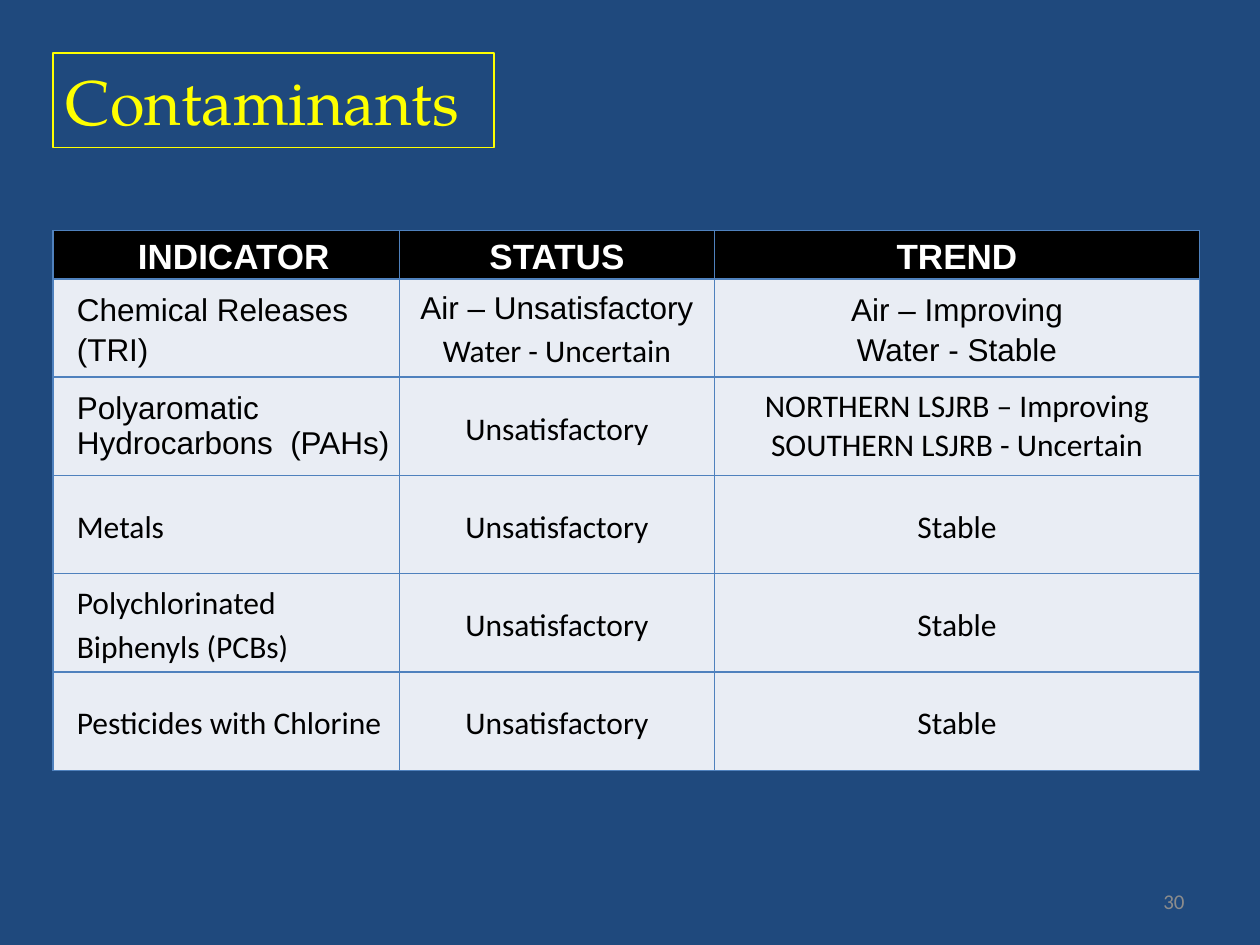
"""Build the Contaminants slide: indicator status and trend table."""
from lxml import etree
from pptx import Presentation
from pptx import util as u
from pptx.dml.color import RGBColor
from pptx.enum import text
from pptx.oxml.ns import qn

NAVY = RGBColor(0x1F, 0x49, 0x7D)
YELLOW = RGBColor(0xFF, 0xFF, 0x00)
BLACK = RGBColor(0, 0, 0)
WHITE = RGBColor(0xFF, 0xFF, 0xFF)
PALE = RGBColor(0xE9, 0xED, 0xF4)
BORDER = RGBColor(0x4F, 0x81, 0xBD)
GREY = RGBColor(0x8C, 0x8C, 0x8C)
SANS, BODY, DISPLAY = "Arial", "Calibri", "TeX Gyre Pagella"
LOOSE, SINGLE = 1.15, 1.0

TITLE = "Contaminants"
PAGE = "30"
HEADINGS = ["INDICATOR", "STATUS", "TREND"]
UNSATISFACTORY = ([("Unsatisfactory", BODY)], LOOSE)
STABLE = ([("Stable", BODY)], LOOSE)
INDICATORS = [
    [([("Chemical Releases (TRI)", SANS)], LOOSE),
     ([("Air – Unsatisfactory", SANS), ("Water - Uncertain", BODY)], LOOSE),
     ([("Air – Improving", SANS), ("Water - Stable", SANS)], LOOSE)],
    [([("Polyaromatic Hydrocarbons  (PAHs)", SANS)], SINGLE),
     UNSATISFACTORY,
     ([("NORTHERN LSJRB – Improving", BODY), ("SOUTHERN LSJRB - Uncertain", BODY)], SINGLE)],
    [([("Metals", BODY)], LOOSE), UNSATISFACTORY, STABLE],
    [([("Polychlorinated Biphenyls (PCBs)", BODY)], LOOSE), UNSATISFACTORY, STABLE],
    [([("Pesticides with Chlorine", BODY)], LOOSE), UNSATISFACTORY, STABLE],
]
COLUMNS = [2.75, 2.5, 3.85]
HEAD_ROW, BODY_ROW = 0.38, 0.78
MARGIN, TABLE_TOP = 0.42, 1.83


def add_words(paragraph, words, font, size, color, bold=False):
    run = paragraph.add_run()
    run.text = words
    run.font.name, run.font.size, run.font.bold = font, u.Pt(size), bold
    run.font.color.rgb = color


def add_borders(cell):
    properties = cell._tc.get_or_add_tcPr()
    for side in ("lnL", "lnR", "lnT", "lnB"):
        line = etree.SubElement(properties, qn(f"a:{side}"), w=str(u.Pt(1)))
        fill = etree.SubElement(line, qn("a:solidFill"))
        etree.SubElement(fill, qn("a:srgbClr"), val=str(BORDER))


def fill_cell(cell, lines, spacing, column, heading):
    add_borders(cell)
    cell.fill.solid()
    cell.fill.fore_color.rgb = BLACK if heading else PALE
    cell.vertical_anchor = text.MSO_ANCHOR.MIDDLE
    cell.margin_left = cell.margin_right = u.Inches(0.07)
    cell.margin_top = cell.margin_bottom = 0
    for index, (words, font) in enumerate(lines):
        frame = cell.text_frame
        paragraph = frame.add_paragraph() if index else frame.paragraphs[0]
        centred = heading or column > 0
        paragraph.alignment = text.PP_ALIGN.CENTER if centred else text.PP_ALIGN.LEFT
        paragraph.line_spacing = spacing
        if column == 0:
            paragraph._p.get_or_add_pPr().set("marL", str(u.Inches(0.12)))
        add_words(paragraph, words, font, 20 if heading else 18,
                  WHITE if heading else BLACK, heading)


def add_title(slide):
    title = slide.shapes.title
    title.left, title.top = u.Inches(MARGIN), u.Inches(MARGIN)
    title.width, title.height = u.Inches(3.5), u.Inches(0.75)
    title.line.color.rgb = YELLOW
    title.line.width = u.Pt(0.75)
    frame = title.text_frame
    frame.auto_size = text.MSO_AUTO_SIZE.NONE
    frame.vertical_anchor = text.MSO_ANCHOR.MIDDLE
    frame.paragraphs[0].alignment = text.PP_ALIGN.LEFT
    add_words(frame.paragraphs[0], TITLE, DISPLAY, 36, YELLOW)


def add_page_number(slide):
    box = slide.shapes.add_textbox(u.Inches(7.17), u.Inches(6.95), u.Inches(2.33), u.Inches(0.4))
    frame = box.text_frame
    frame.word_wrap = True
    frame.vertical_anchor = text.MSO_ANCHOR.MIDDLE
    frame.paragraphs[0].alignment = text.PP_ALIGN.RIGHT
    add_words(frame.paragraphs[0], PAGE, BODY, 12, GREY)


def add_indicators(slide):
    rows = [[([(words, SANS)], LOOSE) for words in HEADINGS]] + INDICATORS
    heights = [HEAD_ROW] + [BODY_ROW] * len(INDICATORS)
    table = slide.shapes.add_table(
        len(rows), len(COLUMNS), u.Inches(MARGIN), u.Inches(TABLE_TOP),
        u.Inches(sum(COLUMNS)), u.Inches(sum(heights))).table
    for column, width in zip(table.columns, COLUMNS):
        column.width = u.Inches(width)
    for r, (row, height) in enumerate(zip(rows, heights)):
        table.rows[r].height = u.Inches(height)
        for c, (lines, spacing) in enumerate(row):
            fill_cell(table.cell(r, c), lines, spacing, c, r == 0)


def main():
    deck = Presentation()
    deck.slide_width, deck.slide_height = u.Inches(10), u.Inches(7.5)
    slide = deck.slides.add_slide(deck.slide_layouts[5])
    slide.background.fill.solid()
    slide.background.fill.fore_color.rgb = NAVY
    add_page_number(slide)
    add_title(slide)
    add_indicators(slide)
    deck.save("out.pptx")


if __name__ == "__main__":
    main()
